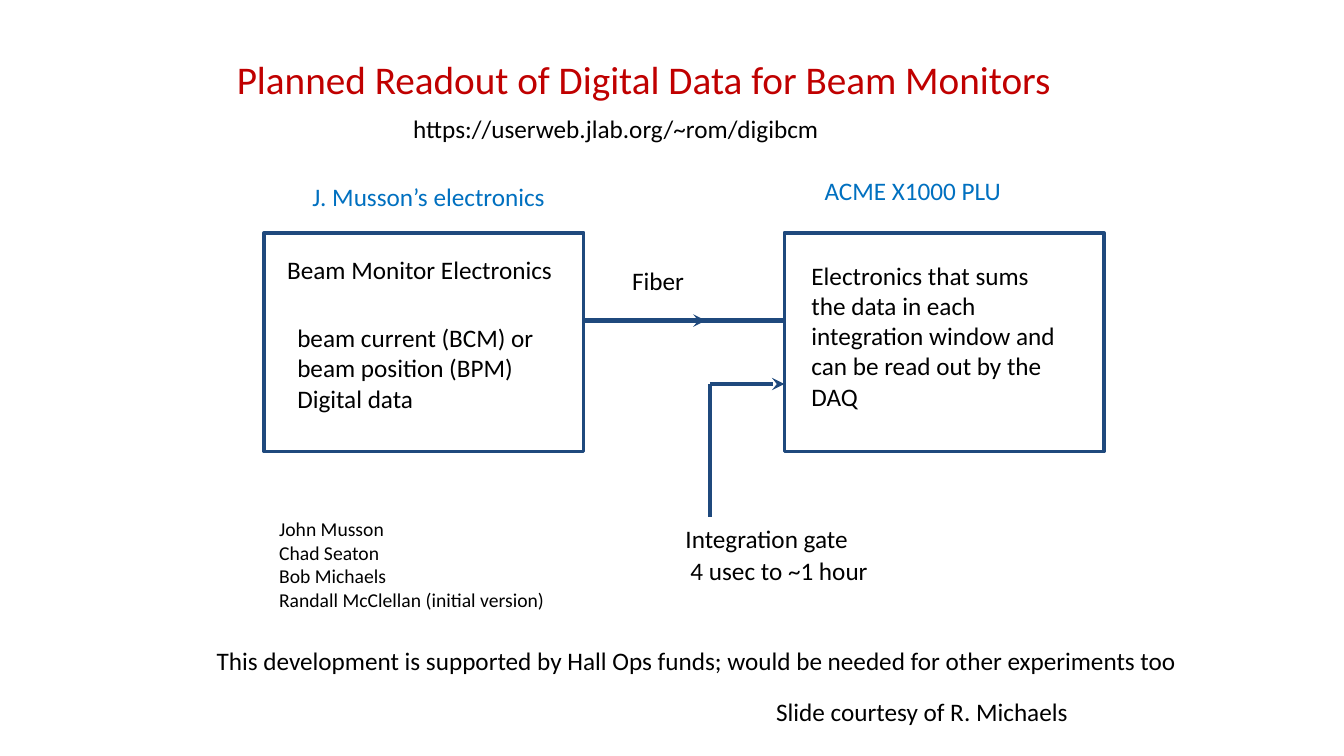
"""Builds the slide on the planned readout of digital beam monitor data."""
from lxml import etree
from pptx import Presentation
from pptx.dml.color import RGBColor
from pptx.enum.shapes import MSO_CONNECTOR, MSO_SHAPE
from pptx.oxml.ns import qn
from pptx.util import Inches, Pt

RECTANGLE = MSO_SHAPE.RECTANGLE
STRAIGHT = MSO_CONNECTOR.STRAIGHT
FONT = "Calibri"
COLORS = {"title": "C00000", "heading": "0070C0", "body": "000000", "diagram": "1F497D"}

BOX_LEFTS = (2.62, 7.78)
BOX_TOP, BOX_WIDTH, BOX_HEIGHT = 2.31, 3.17, 2.17
FIBER_Y, GATE_X, GATE_Y, GATE_BOTTOM = 3.18, 7.04, 3.81, 5.13

TEXTS = [
    ((2.25, 0.5, 8.75, 0.57), ["Planned Readout of Digital Data for Beam Monitors"],
     {"size": 28, "color": "title"}),
    ((4, 1.08, 6.25, 0.4), ["https://userweb.jlab.org/~rom/digibcm"], {}),
    ((3, 1.75, 3.08, 0.4), ["J. Musson’s electronics"], {"color": "heading"}),
    ((8.08, 1.69, 3.08, 0.4), ["ACME X1000 PLU"], {"color": "heading"}),
    ((2.75, 2.47, 2.83, 0.4), ["Beam Monitor Electronics"], {}),
    ((2.85, 3.15, 2.75, 1.01),
     ["beam current (BCM) or", "beam position (BPM)", "Digital data"], {}),
    ((6.17, 2.58, 1.58, 0.4), ["Fiber"], {}),
    ((7.95, 2.53, 2.67, 1.62),
     ["Electronics that sums the data in each integration window and "
      "can be read out by the DAQ"], {}),
    ((6.7, 5.14, 1.88, 0.4), ["Integration gate"], {}),
    ((6.75, 5.46, 2.1, 0.4), ["4 usec to ~1 hour"], {"wrap": False}),
    ((2.67, 5.08, 3.5, 1.04),
     ["John Musson", "Chad Seaton", "Bob Michaels", "Randall McClellan (initial version)"],
     {"size": 14}),
    ((2.05, 6.35, 9.84, 0.4),
     ["This development is supported by Hall Ops funds; "
      "would be needed for other experiments too"], {"wrap": False}),
    ((7.6, 6.86, 3.13, 0.4), ["Slide courtesy of R. Michaels"], {"wrap": False}),
]


def color(name):
    return RGBColor.from_string(COLORS[name])


def add_text(slide, place, paragraphs, size=18, color_name="body", wrap=True):
    frame = slide.shapes.add_textbox(*map(Inches, place)).text_frame
    frame.word_wrap = wrap
    frame.text = "\n".join(paragraphs)
    for paragraph in frame.paragraphs:
        paragraph.font.name = FONT
        paragraph.font.size = Pt(size)
        paragraph.font.color.rgb = color(color_name)


def add_box(slide, left):
    box = slide.shapes.add_shape(
        RECTANGLE, *map(Inches, (left, BOX_TOP, BOX_WIDTH, BOX_HEIGHT)))
    box.shadow.inherit = False
    box.fill.background()
    box.line.color.rgb = color("diagram")
    box.line.width = Pt(2.5)


def add_line(slide, start, end, arrow=False):
    connector = slide.shapes.add_connector(STRAIGHT, *map(Inches, start + end))
    connector.line.color.rgb = color("diagram")
    connector.line.width = Pt(3)
    if arrow:
        etree.SubElement(connector.line._get_or_add_ln(), qn("a:tailEnd"), type="stealth")
    etree.SubElement(connector._element.spPr, qn("a:effectLst"))


def main():
    presentation = Presentation()
    presentation.slide_width = Inches(13.33)
    presentation.slide_height = Inches(7.5)
    slide = presentation.slides.add_slide(presentation.slide_layouts[6])

    for left in BOX_LEFTS:
        add_box(slide, left)
    fiber_start, fiber_end = BOX_LEFTS[0] + BOX_WIDTH, BOX_LEFTS[1]
    add_line(slide, (fiber_start, FIBER_Y), (fiber_end, FIBER_Y))
    add_line(slide, (6.5, FIBER_Y), (7, FIBER_Y), arrow=True)
    add_line(slide, (GATE_X, GATE_Y), (fiber_end, GATE_Y), arrow=True)
    add_line(slide, (GATE_X, GATE_Y), (GATE_X, GATE_BOTTOM))

    for place, paragraphs, style in TEXTS:
        add_text(slide, place, paragraphs, size=style.get("size", 18),
                 color_name=style.get("color", "body"), wrap=style.get("wrap", True))
    presentation.save("out.pptx")


if __name__ == "__main__":
    main()
